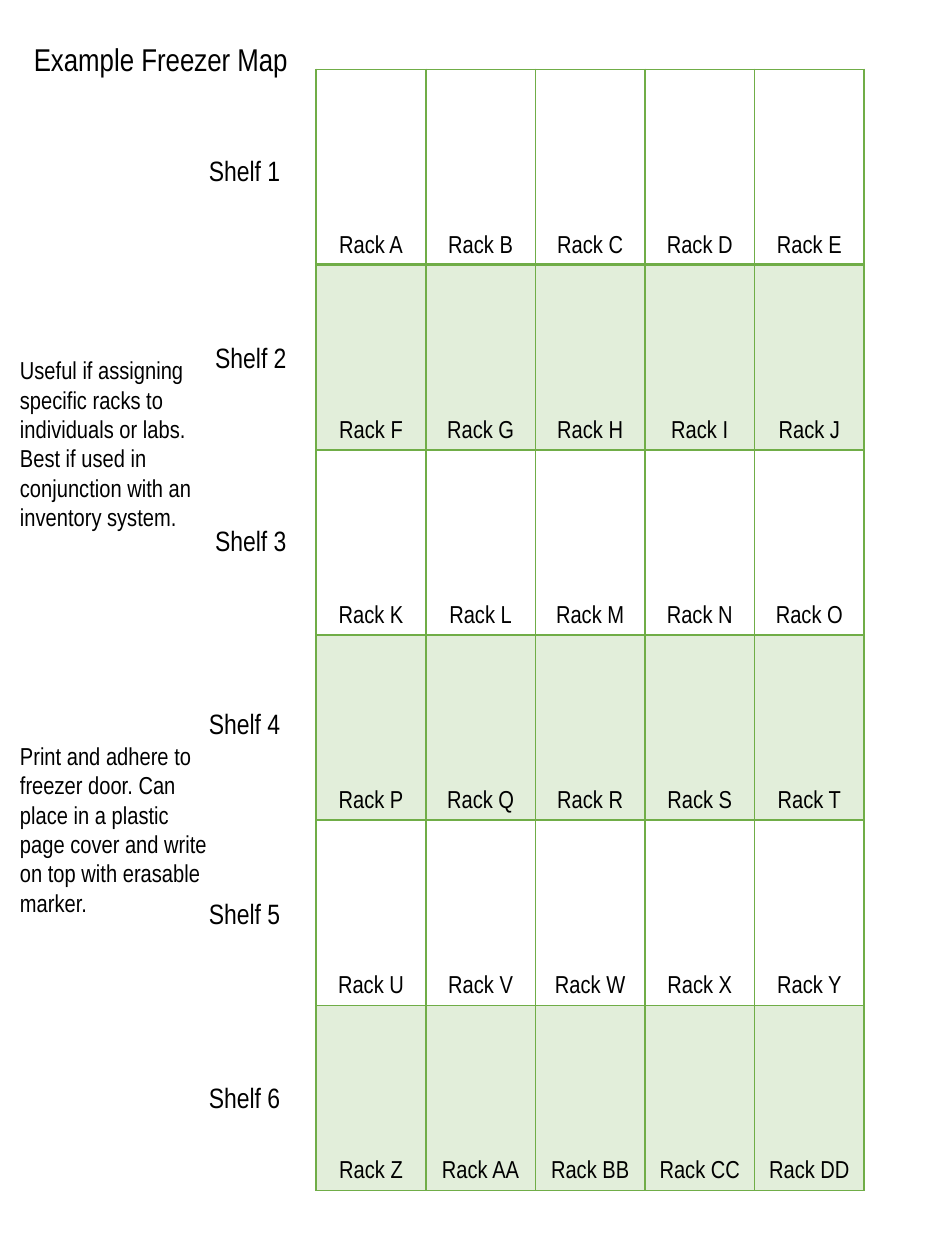
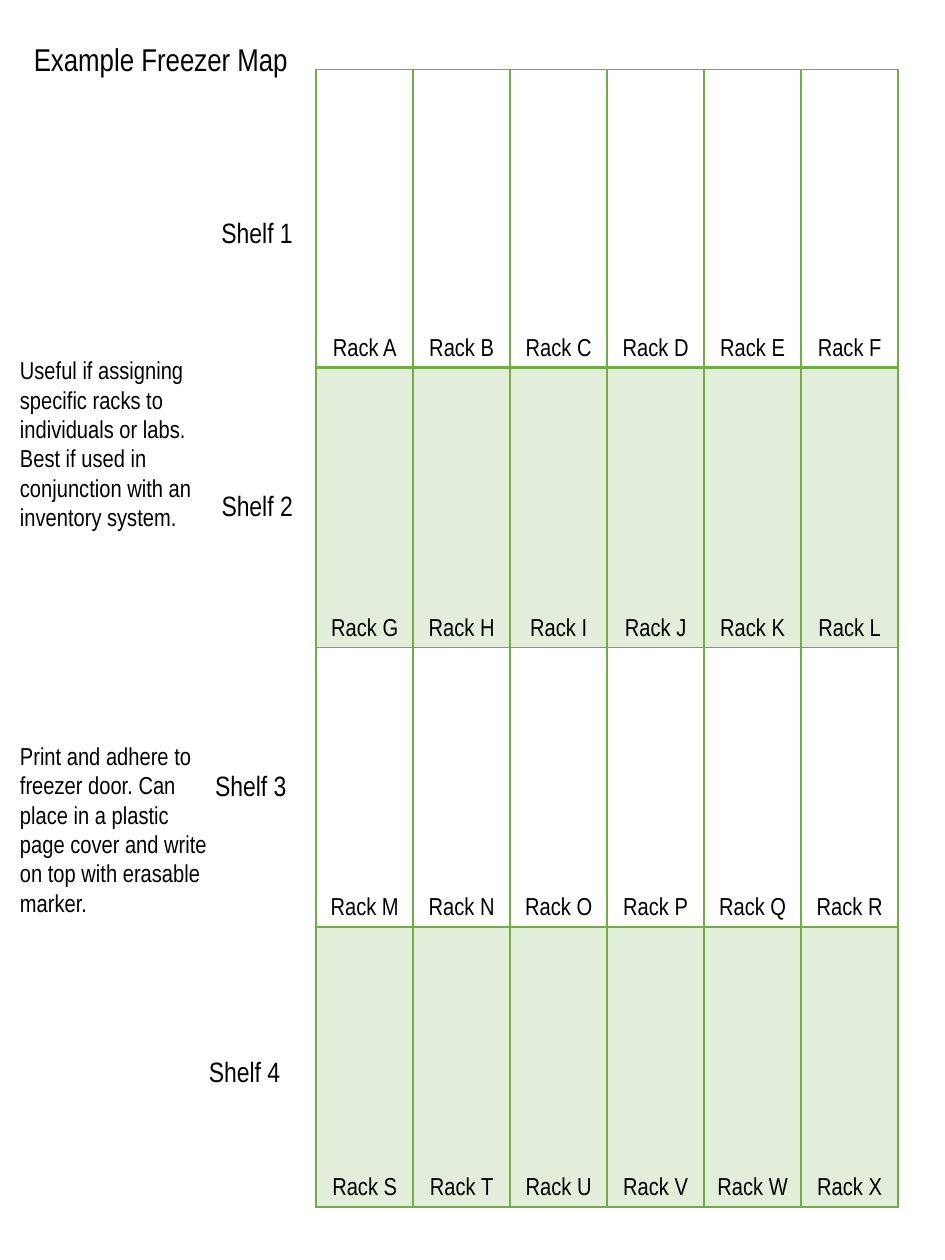
from lxml.etree import SubElement
from pptx import Presentation
from pptx.dml.color import RGBColor
from pptx.enum.text import MSO_ANCHOR as Anchor, MSO_AUTO_SIZE as AutoSize, PP_ALIGN as Align
from pptx.oxml.ns import qn
from pptx.util import Emu, Pt

# Shared style: 100 px to the inch
EMU_PER_PX = 9144
FONT = "Arial Narrow"
BLACK = "000000"
GREEN = "70AD47"
BAND_ALPHA = 20
TITLE_SIZE, SHELF_SIZE, BODY_SIZE = 18, 16, 14
TABLE_LEFT, TABLE_TOP = 251, 55
LETTERS = "ABCDEFGHIJKLMNOPQRSTUVWXYZ"

TITLE = "Example Freezer Map"
USE_NOTE = [
    "Useful if assigning specific racks to individuals or labs. ",
    "Best if used in conjunction with an inventory system.",
]
PRINT_NOTE = [
    "Print and adhere to freezer door. Can place in a plastic page cover "
    "and write on top with erasable marker."
]

# Each map: columns, column width, row heights, shelf label positions (left, top)
MAPS = [
    (5, 87, [155] + [147] * 5,
     [(156, 117), (161, 265), (161, 411), (156, 556), (156, 707), (156, 853)]),
    (6, 77, [237] + [222] * 3,
     [(166, 166), (166, 383), (161, 605), (156, 832)]),
]


def px(length):
    return Emu(length * EMU_PER_PX)


def color(hex_value):
    return RGBColor.from_string(hex_value)


def write(frame, paragraphs, size=BODY_SIZE, align=Align.LEFT, text_color=BLACK):
    for index, text in enumerate(paragraphs):
        paragraph = frame.add_paragraph() if index else frame.paragraphs[0]
        paragraph.alignment = align
        run = paragraph.add_run()
        run.text = text
        run.font.name = FONT
        run.font.size = Pt(size)
        run.font.color.rgb = color(text_color)


def add_text(slide, left, top, width, height, paragraphs, **text_format):
    box = slide.shapes.add_textbox(px(left), px(top), px(width), px(height))
    frame = box.text_frame
    frame.word_wrap = True
    frame.auto_size = AutoSize.SHAPE_TO_FIT_TEXT
    write(frame, paragraphs, **text_format)


def rack_name(index):
    cycle, position = divmod(index, len(LETTERS))
    return "Rack " + LETTERS[position] * (cycle + 1)


def set_borders(cell, top=1, bottom=1):
    properties = cell._tc.get_or_add_tcPr()
    widths = {"lnL": 1, "lnR": 1, "lnT": top, "lnB": bottom}
    for position, (side, width) in enumerate(widths.items()):
        line = SubElement(properties, qn(f"a:{side}"), w=str(Pt(width)))
        fill = SubElement(line, qn("a:solidFill"))
        SubElement(fill, qn("a:srgbClr"), val=GREEN)
        properties.insert(position, line)


def set_band(cell, banded):
    if not banded:
        cell.fill.background()
        return
    cell.fill.solid()
    cell.fill.fore_color.rgb = color(GREEN)
    fill_color = cell._tc.tcPr.find(qn("a:solidFill")).find(qn("a:srgbClr"))
    SubElement(fill_color, qn("a:alpha"), val=str(BAND_ALPHA * 1000))


def add_rack_table(slide, columns, column_width, row_heights):
    frame = slide.shapes.add_table(
        len(row_heights), columns, px(TABLE_LEFT), px(TABLE_TOP),
        px(columns * column_width), px(sum(row_heights)))
    table = frame.table
    table.first_row = False
    table.horz_banding = False
    for column in table.columns:
        column.width = px(column_width)
    for row_index, height in enumerate(row_heights):
        table.rows[row_index].height = px(height)
        for column_index in range(columns):
            cell = table.cell(row_index, column_index)
            name = rack_name(row_index * columns + column_index)
            write(cell.text_frame, [name], align=Align.CENTER)
            cell.vertical_anchor = Anchor.BOTTOM
            set_band(cell, row_index % 2 == 1)
            # The rule below the first shelf is heavier
            set_borders(cell, top=2 if row_index == 1 else 1,
                        bottom=2 if row_index == 0 else 1)


def add_freezer_map(presentation, columns, column_width, row_heights, shelf_positions):
    slide = presentation.slides.add_slide(presentation.slide_layouts[6])
    add_rack_table(slide, columns, column_width, row_heights)
    # Title and side notes
    add_text(slide, 17, 27, 246, 40, [TITLE], size=TITLE_SIZE)
    add_text(slide, 6, 277, 191, 151, USE_NOTE)
    add_text(slide, 6, 583, 169, 151, PRINT_NOTE)
    # Shelf labels
    for number, (left, top) in enumerate(shelf_positions, start=1):
        width = 85 if number == 2 else 107
        add_text(slide, left, top, width, 37, [f"Shelf {number}"], size=SHELF_SIZE)


def main():
    presentation = Presentation()
    presentation.slide_width = px(750)
    presentation.slide_height = px(1000)
    for freezer_map in MAPS:
        add_freezer_map(presentation, *freezer_map)
    presentation.save("out.pptx")


if __name__ == "__main__":
    main()
